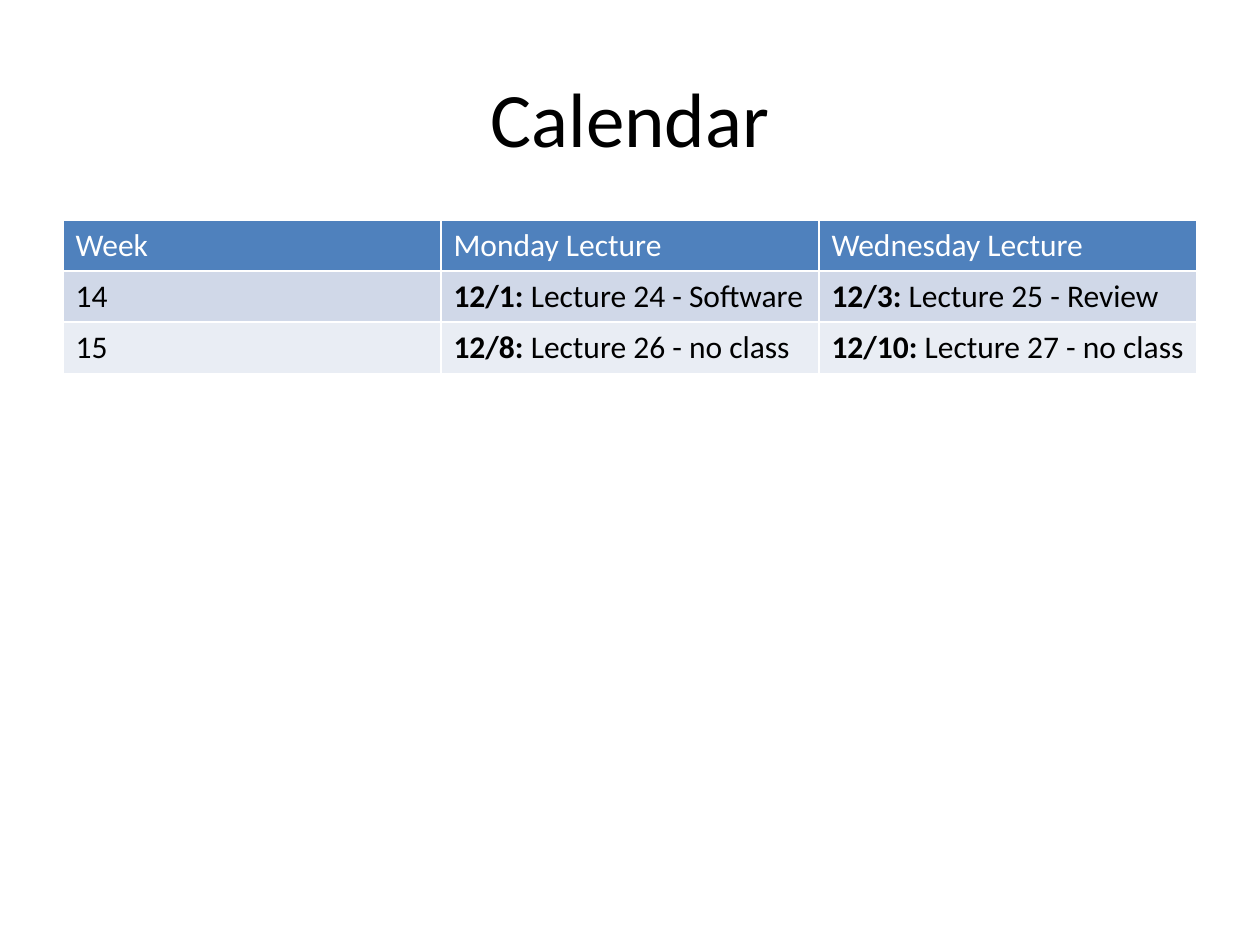
from pptx import Presentation
from pptx import util as u
from pptx.dml.color import RGBColor
from pptx.enum import text

# Content: each cell is (bold lead, plain text)
TITLE = "Calendar"
ROWS = [
    [("", "Week"), ("", "Monday Lecture"), ("", "Wednesday Lecture")],
    [("", "14"), ("12/1:", " Lecture 24 - Software"), ("12/3:", " Lecture 25 - Review")],
    [("", "15"), ("12/8:", " Lecture 26 - no class"), ("12/10:", " Lecture 27 - no class")],
]
ROW_STYLES = [("4F81BD", "FFFFFF"), ("D0D8E8", "000000"), ("E9EDF4", "000000")]
FONT = "Calibri"

# Layout in px
PX = 914400 // 126
SLIDE_W, SLIDE_H = 1260, 945
MARGIN = 63
CONTENT_W = SLIDE_W - 2 * MARGIN
TITLE_TOP, TITLE_H = 38, 157
TABLE_TOP, ROW_H = 220, 51


def px(value):
    return u.Emu(value * PX)


def color(value):
    return RGBColor.from_string(value)


def format_run(run, size, hex_color, bold=False):
    run.font.name = FONT
    run.font.size = u.Pt(size)
    run.font.bold = bold
    run.font.color.rgb = color(hex_color)


def fill_cell(cell, parts, fill, ink):
    cell.fill.solid()
    cell.fill.fore_color.rgb = color(fill)
    paragraph = cell.text_frame.paragraphs[0]
    for part, bold in zip(parts, (True, False)):
        if part:
            run = paragraph.add_run()
            run.text = part
            format_run(run, 18, ink, bold)


def main():
    presentation = Presentation()
    presentation.slide_width, presentation.slide_height = px(SLIDE_W), px(SLIDE_H)
    slide = presentation.slides.add_slide(presentation.slide_layouts[5])

    # Title
    title = slide.shapes.title
    title.left, title.top = px(MARGIN), px(TITLE_TOP)
    title.width, title.height = px(CONTENT_W), px(TITLE_H)
    title.text_frame.text = TITLE
    title.text_frame.vertical_anchor = text.MSO_ANCHOR.MIDDLE
    paragraph = title.text_frame.paragraphs[0]
    paragraph.alignment = text.PP_ALIGN.CENTER
    format_run(paragraph.runs[0], 44, "000000")

    # Lecture table
    table = slide.shapes.add_table(
        len(ROWS), len(ROWS[0]), px(MARGIN), px(TABLE_TOP),
        px(CONTENT_W), px(ROW_H * len(ROWS))).table
    for r, (row, (fill, ink)) in enumerate(zip(ROWS, ROW_STYLES)):
        for c, parts in enumerate(row):
            fill_cell(table.cell(r, c), parts, fill, ink)

    presentation.save("out.pptx")


if __name__ == "__main__":
    main()
